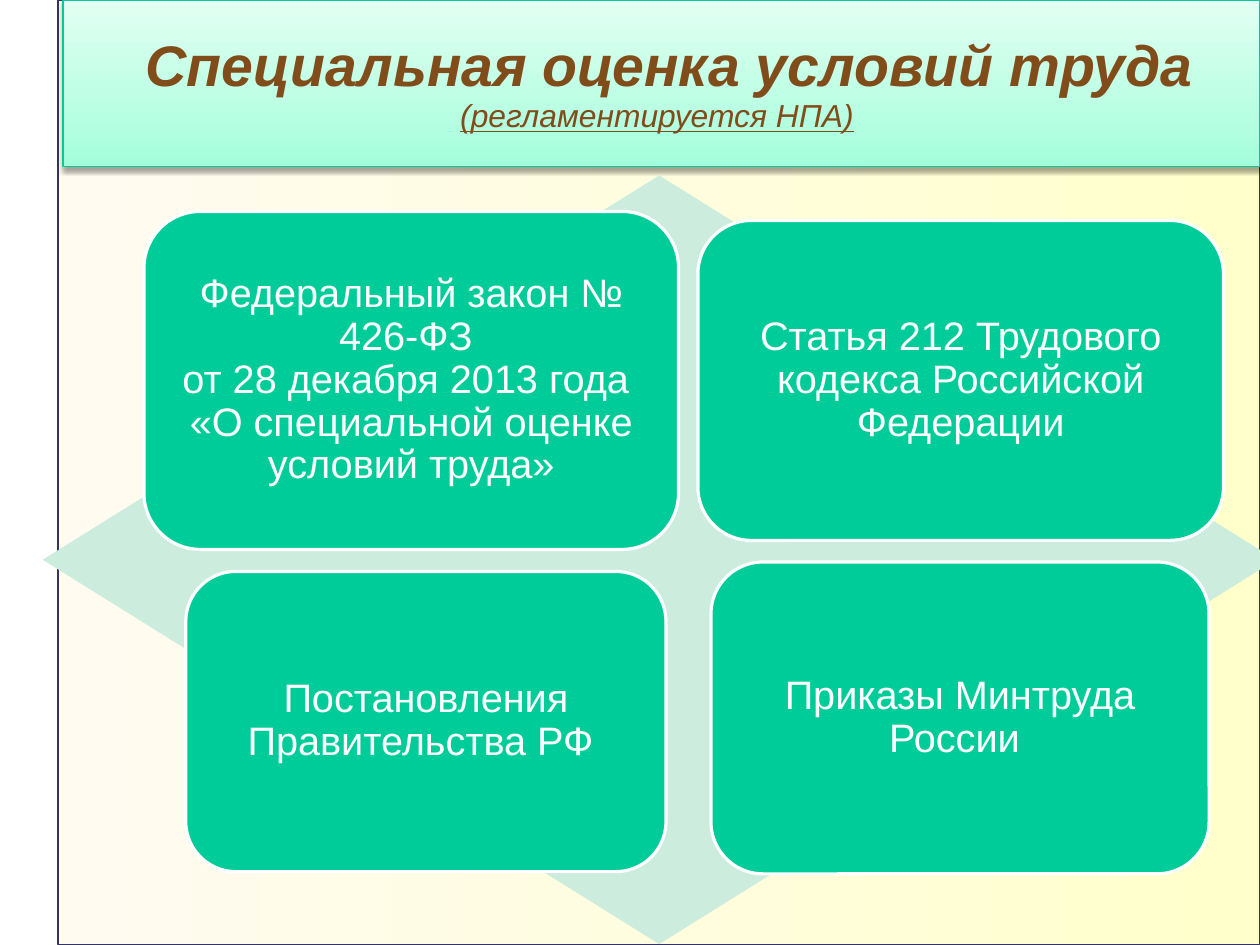
"""Build the slide on the legal acts behind the special assessment of working conditions."""
from dataclasses import dataclass

from lxml import etree
from pptx import Presentation
from pptx.dml.color import RGBColor
from pptx.enum import shapes, text
from pptx.oxml import ns
from pptx.util import Cm, Pt

HEADING = " Специальная оценка условий труда"
SUBHEADING = "(регламентируется НПА)"
ACTS = [
    ("Федеральный закон № 426-ФЗ \vот 28 декабря 2013 года \v«О специальной оценке условий труда»",
     (3.2, 4.7, 11.88, 7.51)),
    ("Статья 212 Трудового кодекса Российской Федерации", (15.51, 4.9, 11.68, 7.11)),
    ("Постановления Правительства РФ ", (4.13, 12.7, 10.67, 6.67)),
    ("Приказы Минтруда России ", (15.8, 12.49, 11.07, 6.93)),
]
SLIDE_SIZE = (28, 21)
BACKDROP_LEFT = 1.29
BANNER_BOX = (1.4, 0, 26.6, 3.7)
DIAMOND_BOX = (0.95, 3.9, 27.4, 17.08)


@dataclass(frozen=True)
class Theme:
    font: str = "Arial"
    backdrop: tuple = ("FFFBF0", "FFFFCC")
    backdrop_line: str = "333366"
    banner: tuple = ("E3FFF3", "A3FFDB")
    accent: str = "00CC99"
    diamond: str = "CCECDE"
    heading: str = "804C19"
    light: str = "FFFFFF"
    heading_size: int = 36
    subheading_size: int = 20
    act_size: int = 25


THEME = Theme()


def rgb(code):
    return RGBColor.from_string(code)


def place(shape, box):
    shape.left, shape.top, shape.width, shape.height = map(Cm, box)


def add_plain(slide, kind, box):
    shape = slide.shapes.add_shape(kind, *map(Cm, box))
    shape.shadow.inherit = False
    return shape


def paint(shape, color):
    shape.fill.solid()
    shape.fill.fore_color.rgb = rgb(color)


def blend(shape, colors, angle):
    shape.fill.gradient()
    shape.fill.gradient_angle = angle
    for stop, color in zip(shape.fill.gradient_stops, colors):
        stop.color.rgb = rgb(color)


def outline(shape, color, width):
    shape.line.color.rgb = rgb(color)
    shape.line.width = Pt(width)


def set_font(font, size, color):
    font.name = THEME.font
    font.size = Pt(size)
    font.color.rgb = rgb(color)


def drop_shadow(shape):
    effects = etree.SubElement(shape._element.spPr, ns.qn("a:effectLst"))
    shadow = etree.SubElement(effects, ns.qn("a:outerShdw"), blurRad="40000", dist="23000",
                              dir="5400000", rotWithShape="0")
    black = etree.SubElement(shadow, ns.qn("a:srgbClr"), val="000000")
    etree.SubElement(black, ns.qn("a:alpha"), val="35000")


def add_backdrop(slide):
    width, height = SLIDE_SIZE
    backdrop = add_plain(slide, shapes.MSO_SHAPE.RECTANGLE,
                         (BACKDROP_LEFT, 0, width - BACKDROP_LEFT, height))
    blend(backdrop, THEME.backdrop, 0)
    outline(backdrop, THEME.backdrop_line, 0.75)
    slide.shapes._spTree.insert(2, backdrop._element)


def fill_banner(banner):
    place(banner, BANNER_BOX)
    blend(banner, THEME.banner, 270)
    outline(banner, THEME.accent, 1)
    drop_shadow(banner)
    frame = banner.text_frame
    frame.auto_size = text.MSO_AUTO_SIZE.NONE
    frame.word_wrap = True
    frame.vertical_anchor = text.MSO_ANCHOR.MIDDLE
    frame.margin_left = frame.margin_right = frame.margin_bottom = 0
    frame.margin_top = Cm(0.1)
    lines = frame.paragraphs[0]
    lines.alignment = text.PP_ALIGN.CENTER
    lines.line_spacing = 0.93
    set_font(lines.font, THEME.heading_size, THEME.heading)
    lines.font.italic = True
    heading = lines.add_run()
    heading.text = HEADING
    heading.font.bold = True
    lines.add_line_break()
    for wording, underlined in ((SUBHEADING, True), (" ", False)):
        subheading = lines.add_run()
        subheading.text = wording
        subheading.font.size = Pt(THEME.subheading_size)
        subheading.font.underline = underlined


def add_act(slide, wording, box):
    act = add_plain(slide, shapes.MSO_SHAPE.ROUNDED_RECTANGLE, box)
    paint(act, THEME.accent)
    outline(act, THEME.light, 2)
    frame = act.text_frame
    frame.word_wrap = True
    frame.vertical_anchor = text.MSO_ANCHOR.MIDDLE
    frame.margin_left = frame.margin_right = frame.margin_top = frame.margin_bottom = Cm(0.25)
    lines = frame.paragraphs[0]
    lines.text = wording
    lines.alignment = text.PP_ALIGN.CENTER
    lines.line_spacing = 0.9
    set_font(lines.font, THEME.act_size, THEME.light)


def main():
    deck = Presentation()
    deck.slide_width, deck.slide_height = map(Cm, SLIDE_SIZE)
    slide = deck.slides.add_slide(deck.slide_layouts[5])
    add_backdrop(slide)
    fill_banner(slide.shapes.title)
    diamond = add_plain(slide, shapes.MSO_SHAPE.DIAMOND, DIAMOND_BOX)
    paint(diamond, THEME.diamond)
    diamond.line.fill.background()
    for wording, box in ACTS:
        add_act(slide, wording, box)
    deck.save("out.pptx")


if __name__ == "__main__":
    main()
